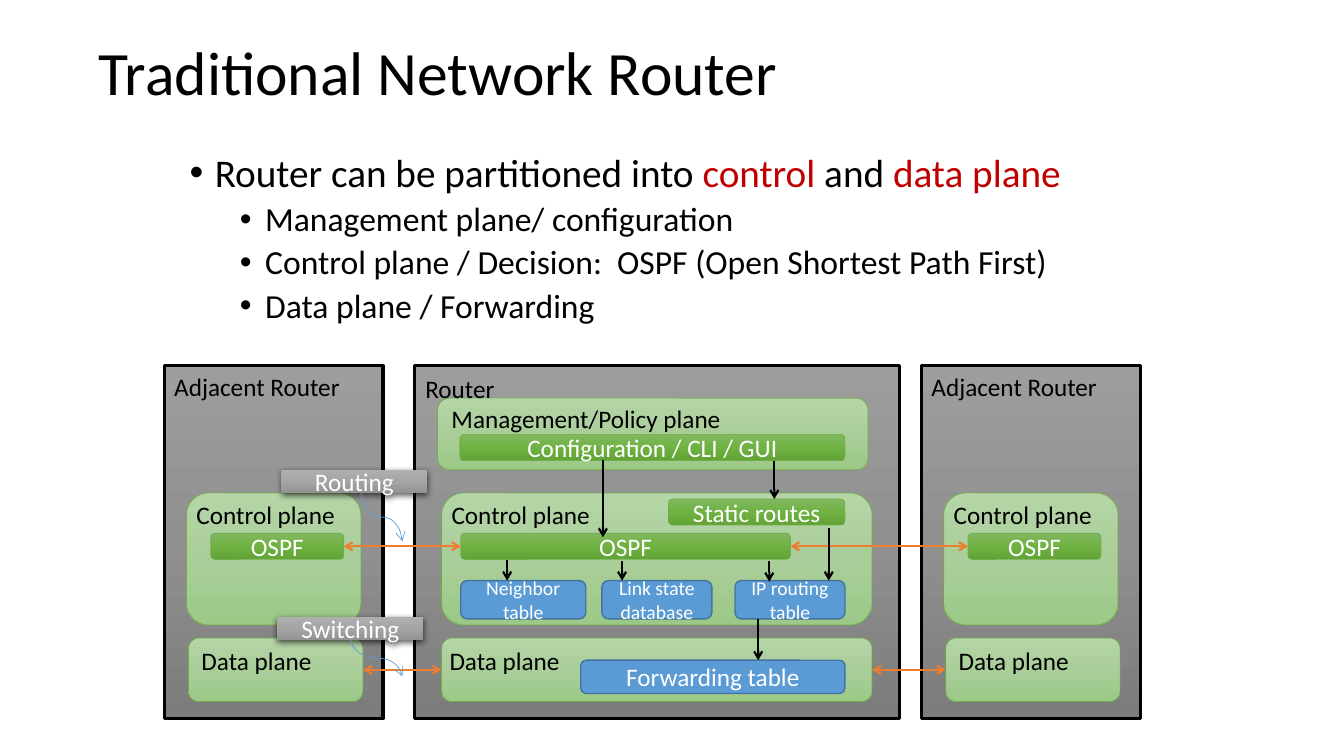
from copy import deepcopy
from pptx import Presentation
from pptx.dml.color import RGBColor
from pptx.enum.shapes import MSO_CONNECTOR as Connector, MSO_SHAPE as Shape
from pptx.enum.text import MSO_ANCHOR as Anchor, MSO_AUTO_SIZE as AutoSize, PP_ALIGN as Align
from pptx.oxml import parse_xml
from pptx.oxml.ns import nsdecls, qn
from pptx.util import Inches, Pt

BLACK = RGBColor(0x00, 0x00, 0x00)
WHITE = RGBColor(0xFF, 0xFF, 0xFF)
RED = RGBColor(0xC0, 0x00, 0x00)
GREEN = RGBColor(0x70, 0xAD, 0x47)
BLUE = RGBColor(0x5B, 0x9B, 0xD5)
NAVY = RGBColor(0x43, 0x73, 0x9E)
ORANGE = RGBColor(0xED, 0x7D, 0x31)
GRAY_FADE = [RGBColor(0x9D, 0x9D, 0x9D), RGBColor(0x90, 0x90, 0x90), RGBColor(0x7C, 0x7C, 0x7C)]
PALE_FADE = [RGBColor(0xB5, 0xD5, 0xA7), RGBColor(0xAA, 0xCE, 0x9A), RGBColor(0x9C, 0xC9, 0x87)]
GREEN_FADE = [RGBColor(0x81, 0xB8, 0x61), RGBColor(0x6F, 0xB2, 0x42), RGBColor(0x62, 0xA3, 0x36)]
SILVER_FADE = [RGBColor(0xAF, 0xAF, 0xAF), RGBColor(0xA5, 0xA5, 0xA5), RGBColor(0x93, 0x93, 0x93)]

TITLE = "Traditional Network Router"
BULLETS = [
    (0, [("Router can be partitioned into ", BLACK), ("control", RED),
         (" and ", BLACK), ("data plane", RED)]),
    (1, [("Management plane/ configuration", BLACK)]),
    (1, [("Control plane / Decision:  OSPF (Open Shortest Path First)", BLACK)]),
    (1, [("Data plane / Forwarding", BLACK)]),
]
BULLET_LEVELS = [
    {"size": 28, "before": 10, "margin": 0.25},
    {"size": 24, "before": 5, "margin": 0.75},
]
STYLES = {
    "router": {"preset": Shape.RECTANGLE, "fade": GRAY_FADE, "edge": BLACK, "weight": 2.25},
    "plane": {"preset": Shape.ROUNDED_RECTANGLE, "fade": PALE_FADE, "edge": GREEN, "weight": 0.5},
    "process": {"preset": Shape.ROUNDED_RECTANGLE, "fade": GREEN_FADE, "edge": GREEN, "weight": 0.5},
    "table": {"preset": Shape.ROUNDED_RECTANGLE, "fade": None, "edge": NAVY, "weight": 1},
    "callout": {"preset": Shape.RECTANGLE, "fade": SILVER_FADE, "edge": None, "weight": 0},
}
ROUTER_PARTS = [
    ("frame", "router", (4.11, 3.63, 4.81, 3.5), "", 18),
    ("management", "plane", (4.34, 3.95, 4.27, 0.71), "", 18),
    ("control", "plane", (4.38, 4.89, 4.27, 1.31), "", 18),
    ("configuration", "process", (4.56, 4.31, 3.82, 0.26), "Configuration / CLI / GUI", 18),
    ("static", "process", (6.63, 4.95, 1.75, 0.26), "Static routes", 18),
    ("ospf", "process", (4.57, 5.29, 3.27, 0.26), "OSPF", 18),
    ("neighbor", "table", (4.57, 5.76, 1.24, 0.38), "Neighbor table", 14),
    ("link state", "table", (5.97, 5.76, 1.09, 0.38), "Link state database", 14),
    ("ip routing", "table", (7.29, 5.76, 1.09, 0.38), "IP routing table", 14),
    ("data", "plane", (4.38, 6.33, 4.27, 0.63), "", 18),
    ("forwarding", "table", (5.76, 6.55, 2.62, 0.33), "Forwarding table", 18),
]
ROUTER_LABELS = [
    ("Router", 4.12, 3.65, 0.9),
    ("Management/Policy plane", 4.38, 3.95, 2.9),
    ("Control plane", 4.38, 4.9, 1.59),
    ("Data plane", 4.36, 6.35, 1.31),
]
ADJACENT_PARTS = [
    ("frame", "router", (0, 3.63, 2.17, 3.5), "", 18),
    ("control", "plane", (0.22, 4.89, 1.73, 1.31), "", 18),
    ("data", "plane", (0.24, 6.33, 1.73, 0.63), "", 18),
    ("ospf", "process", (0.46, 5.29, 1.32, 0.26), "OSPF", 18),
]
ADJACENT_LABELS = [
    ("Adjacent Router", 0, 3.63, 1.86),
    ("Control plane", 0.22, 4.9, 1.59),
    ("Data plane", 0.27, 6.35, 1.31),
]
ADJACENT_LEFTS = {"left": 1.63, "right": 9.14}
PEER_PARTS = ["ospf", "data"]
DOWN_ARROWS = [
    (7.68, 4.57, 4.95), (5.98, 4.56, 5.33), (5.03, 5.56, 5.76), (6.17, 5.57, 5.76),
    (7.63, 5.57, 5.77), (7.52, 6.14, 6.55), (8.22, 5.24, 5.76),
]
CALLOUTS = [
    ("routing", "callout", (2.79, 4.66, 1.45, 0.23), "Routing", 18),
    ("switching", "callout", (2.75, 6.12, 1.45, 0.23), "Switching", 18),
]
CALLOUT_CURVES = [(3.58, 4.89, 3.99, 5.37), (3.48, 6.35, 3.99, 6.71)]


def place(shape, *box):
    shape.left, shape.top, shape.width, shape.height = map(Inches, box)


def write(paragraph, text, size, color):
    run = paragraph.add_run()
    run.text = text
    for key, value in {"name": "Calibri", "size": Pt(size)}.items():
        setattr(run.font, key, value)
    run.font.color.rgb = color


def fade_down(fill, colors):
    fill.gradient()
    fill.gradient_angle = 270
    first = fill.gradient_stops[0]
    stop_list = shape_stops = first._gs.getparent()
    stop_list.insert(1, deepcopy(first._gs))
    for index, (stop, color) in enumerate(zip(fill.gradient_stops, colors)):
        stop.position = index / 2
        stop.color.rgb = color


def add_part(slide, style_name, box, text, size):
    style = STYLES[style_name]
    part = slide.shapes.add_shape(style["preset"], *map(Inches, box))
    part.shadow.inherit = False
    if style["fade"]:
        fade_down(part.fill, style["fade"])
    else:
        part.fill.solid()
        part.fill.fore_color.rgb = BLUE
    if style["edge"] is None:
        part.line.fill.background()
        part.element.spPr.find(qn("a:effectLst")).append(parse_xml(
            f'<a:outerShdw {nsdecls("a")} blurRad="57150" dist="19050" dir="5400000" '
            'algn="ctr" rotWithShape="0"><a:srgbClr val="000000"><a:alpha val="63000"/>'
            '</a:srgbClr></a:outerShdw>'))
    else:
        part.line.color.rgb = style["edge"]
        part.line.width = Pt(style["weight"])
    if text:
        part.text_frame.word_wrap = True
        part.text_frame.vertical_anchor = Anchor.MIDDLE
        paragraph = part.text_frame.paragraphs[0]
        paragraph.alignment = Align.CENTER
        write(paragraph, text, size, WHITE)
    return part


def add_group(slide, parts, labels, offset=0):
    built = {}
    for key, style, (x, y, w, h), text, size in parts:
        built[key] = add_part(slide, style, (x + offset, y, w, h), text, size)
    for text, x, y, width in labels:
        label = slide.shapes.add_textbox(*map(Inches, (x + offset, y, width, 0.4)))
        label.text_frame.word_wrap = False
        write(label.text_frame.paragraphs[0], text, 18, BLACK)
    return built


def add_arrow(slide, kind, ends, color, weight, tips=("tailEnd",)):
    arrow = slide.shapes.add_connector(kind, *map(Inches, ends))
    arrow.line.color.rgb = color
    arrow.line.width = Pt(weight)
    properties = arrow.element.spPr
    for tip in tips:
        properties.find(qn("a:ln")).append(parse_xml(f'<a:{tip} {nsdecls("a")} type="arrow"/>'))
    properties.append(parse_xml(f'<a:effectLst {nsdecls("a")}/>'))
    return arrow


def add_text(slide):
    title, body = slide.shapes.title, slide.placeholders[1]
    place(title, 0.88, 0.26, 11.5, 0.97)
    place(body, 1.78, 1.47, 9.39, 4.95)
    for frame, anchor in ((title.text_frame, Anchor.MIDDLE), (body.text_frame, Anchor.TOP)):
        for key, value in {"auto_size": AutoSize.NONE, "word_wrap": True,
                           "vertical_anchor": anchor}.items():
            setattr(frame, key, value)
    heading = title.text_frame.paragraphs[0]
    heading.alignment, heading.line_spacing = Align.LEFT, 0.9
    write(heading, TITLE, 44, BLACK)
    for index, (level, pieces) in enumerate(BULLETS):
        look = BULLET_LEVELS[level]
        item = body.text_frame.add_paragraph() if index else body.text_frame.paragraphs[0]
        for key, value in {"level": level, "line_spacing": 0.9,
                           "space_before": Pt(look["before"])}.items():
            setattr(item, key, value)
        properties = item._p.get_or_add_pPr()
        properties.set("marL", str(Inches(look["margin"])))
        properties.set("indent", str(Inches(-0.25)))
        properties.append(parse_xml(f'<a:buFont {nsdecls("a")} typeface="Arial"/>'))
        properties.append(parse_xml(f'<a:buChar {nsdecls("a")} char="•"/>'))
        for text, color in pieces:
            write(item, text, look["size"], color)


def main():
    """Build the slide on the planes of a traditional network router."""
    deck = Presentation()
    deck.slide_width, deck.slide_height = Inches(13.33), Inches(7.5)
    slide = deck.slides.add_slide(deck.slide_layouts[1])
    add_text(slide)
    router = add_group(slide, ROUTER_PARTS, ROUTER_LABELS)
    adjacent = {side: add_group(slide, ADJACENT_PARTS, ADJACENT_LABELS, x)
                for side, x in ADJACENT_LEFTS.items()}
    for key in PEER_PARTS:
        for start, end in ((adjacent["left"], router), (router, adjacent["right"])):
            link = add_arrow(slide, Connector.STRAIGHT, (0, 0, 1, 1), ORANGE, 1.5,
                             ("headEnd", "tailEnd"))
            link.begin_connect(start[key], 3)
            link.end_connect(end[key], 1)
    for x, top, bottom in DOWN_ARROWS:
        add_arrow(slide, Connector.STRAIGHT, (x, top, x, bottom), BLACK, 1.5)
    add_group(slide, CALLOUTS, [])
    for x1, y1, x2, y2 in CALLOUT_CURVES:
        cx, cy, half_w, half_h = (x1 + x2) / 2, (y1 + y2) / 2, (x2 - x1) / 2, (y2 - y1) / 2
        curve = add_arrow(slide, Connector.CURVE,
                          (cx + half_h, cy - half_w, cx - half_h, cy + half_w), BLUE, 0.5)
        curve.element.spPr.find(qn("a:xfrm")).set("rot", str(270 * 60000))
    deck.save("out.pptx")


if __name__ == "__main__":
    main()
